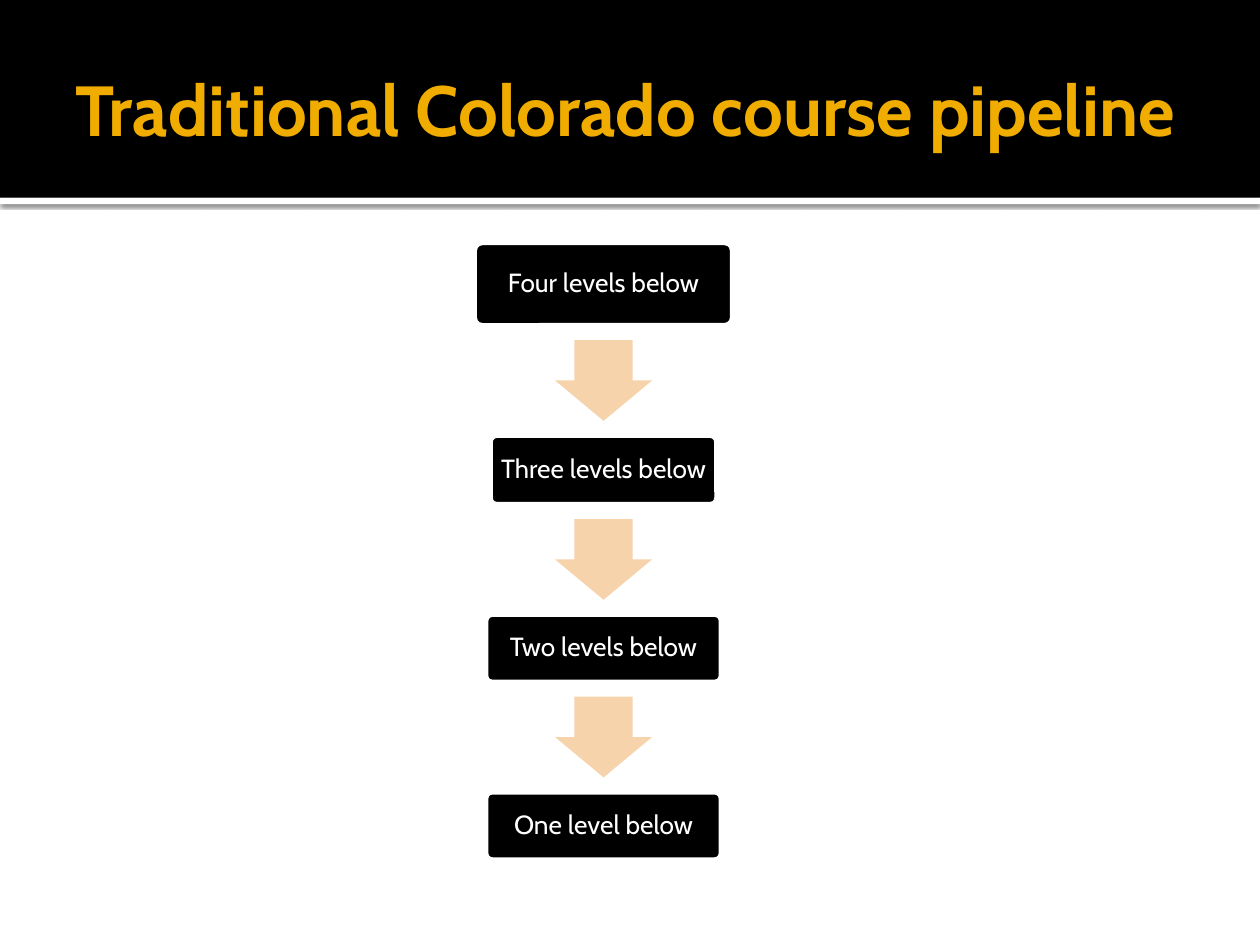
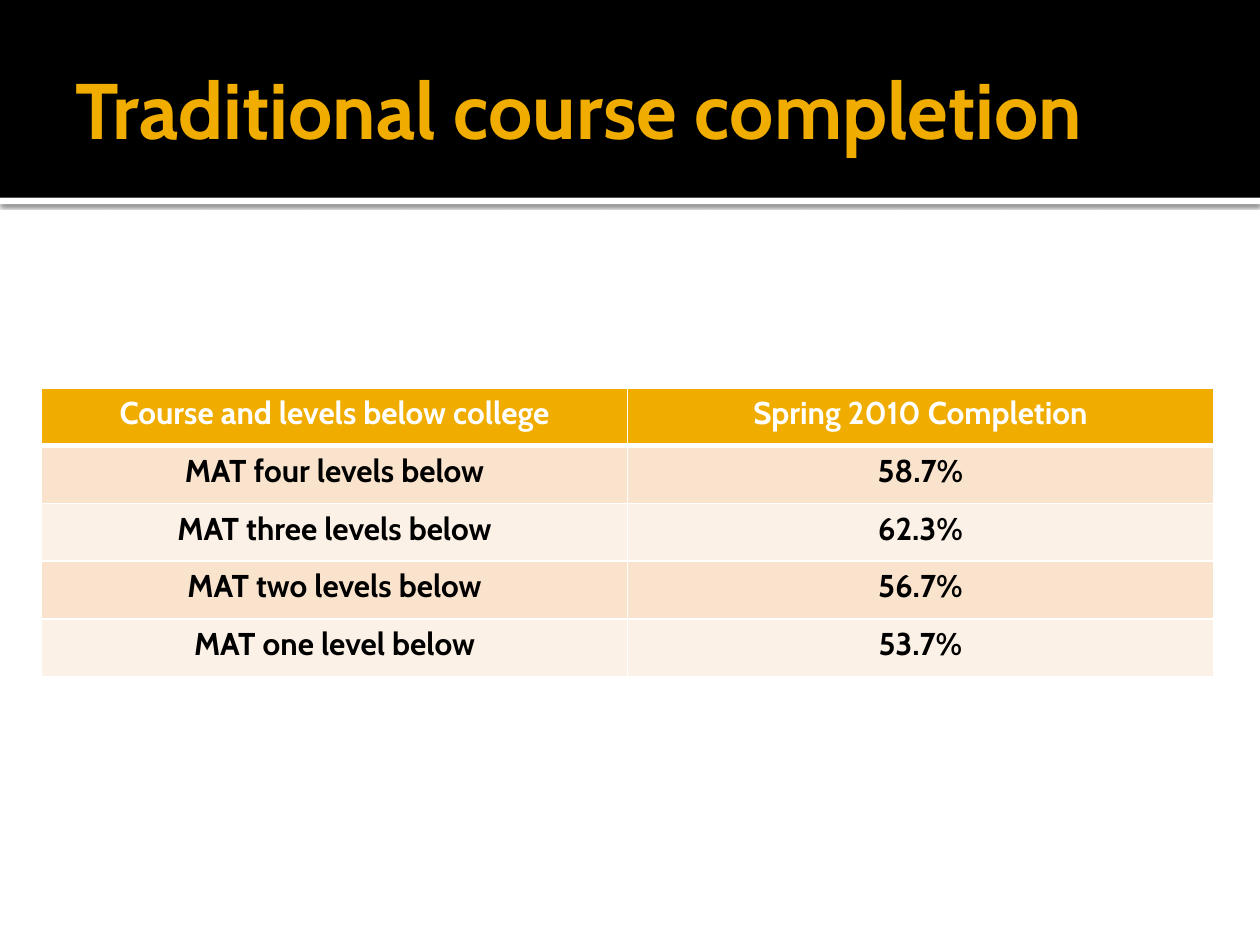
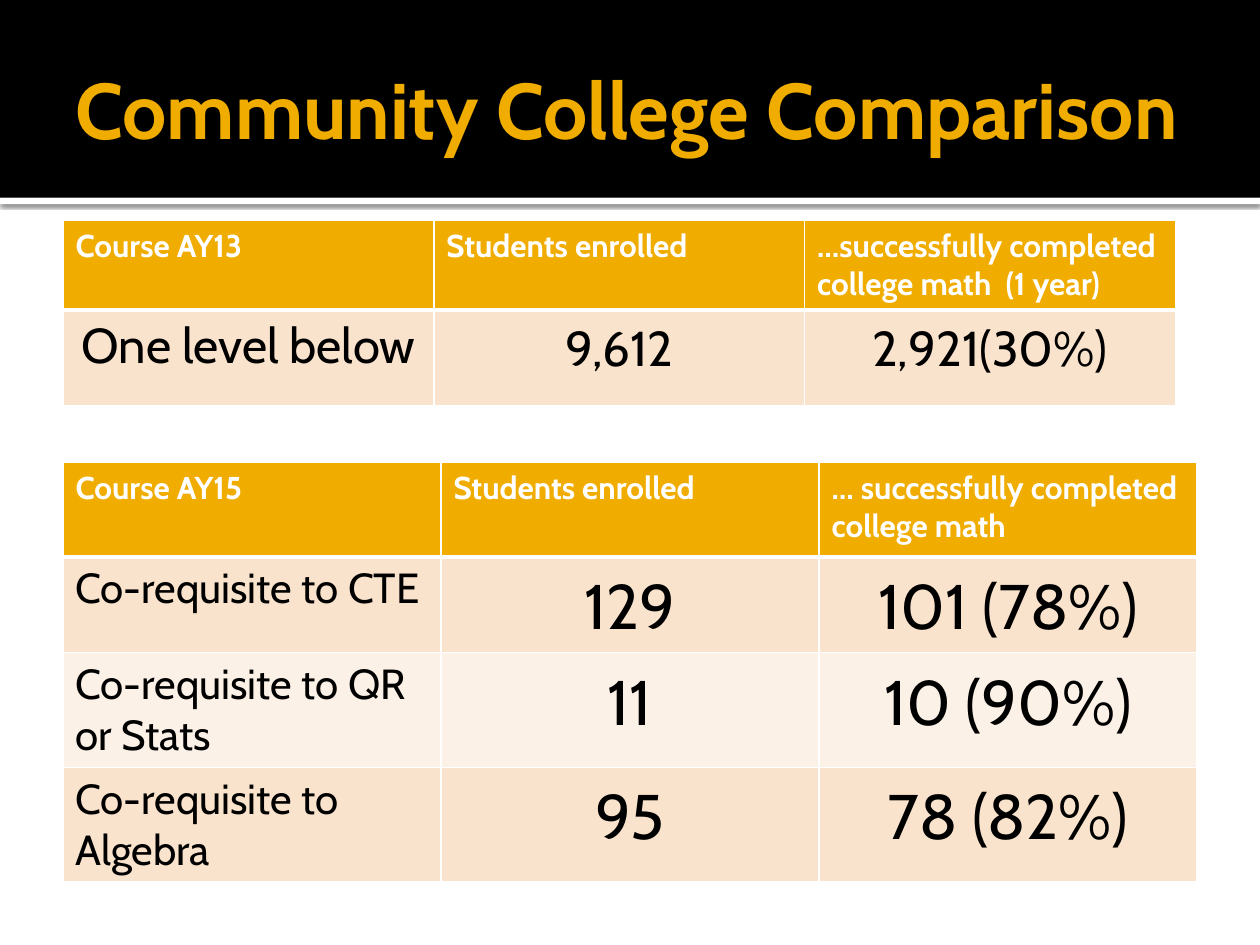
"""Build three slides on traditional and co-requisite college math courses."""
from dataclasses import dataclass, replace
from typing import Optional

from lxml.etree import SubElement
from pptx import Presentation
from pptx.dml.color import RGBColor
from pptx.enum.shapes import MSO_SHAPE as Preset
from pptx.enum.text import MSO_ANCHOR as Anchor, MSO_AUTO_SIZE as AutoSize, PP_ALIGN as Align
from pptx.oxml import parse_xml
from pptx.oxml.ns import nsdecls, qn
from pptx.util import Emu, Inches, Pt

BLACK = RGBColor(0x00, 0x00, 0x00)
WHITE = RGBColor(0xFF, 0xFF, 0xFF)
GOLD = RGBColor(0xF0, 0xAD, 0x00)
PEACH = RGBColor(0xF6, 0xD3, 0xAB)
STRIPES = (RGBColor(0xF9, 0xE3, 0xCC), RGBColor(0xFC, 0xF1, 0xE7))
FONT = "Cabin"

COLUMNS, ROWS = 100, 75
CELL = Inches(0.1)
BAND_ROWS = 15.7


def grid(count: float) -> Emu:
    """Turn a count of grid columns or rows into a length."""
    return Emu(round(count * CELL))


@dataclass(frozen=True)
class TextStyle:
    """Look of a paragraph and the margins around it, in grid units."""
    size: float
    color: RGBColor = BLACK
    bold: bool = False
    align: Align = Align.LEFT
    margin_x: float = 1
    margin_y: float = 0.5
    line_spacing: Optional[float] = None
    space_after: float = 0


@dataclass(frozen=True)
class Step:
    """One box of the course pipeline."""
    label: str
    width: float
    height: float


@dataclass(frozen=True)
class Grid:
    """A table with a header row and one text style per body column."""
    left: float
    top: float
    column_width: float
    row_heights: tuple[float, ...]
    header: TextStyle
    body: tuple[TextStyle, ...]
    texts: tuple[tuple[str, ...], ...]


TITLE = TextStyle(45, GOLD, bold=True)
LONG_TITLE = replace(TITLE, size=40.5)
STEP_TEXT = TextStyle(15, WHITE, align=Align.CENTER, margin_x=0.7, margin_y=0.7, line_spacing=0.9)
HEADER = TextStyle(18, WHITE, bold=True)
CENTERED_HEADER = replace(HEADER, align=Align.CENTER, margin_x=1.1)
COMPLETION = replace(CENTERED_HEADER, color=BLACK)
LEVEL = TextStyle(28, align=Align.CENTER)
COUNT = replace(LEVEL, margin_x=0.7, margin_y=0, line_spacing=1.15, space_after=10)
COREQUISITE = TextStyle(24)
BIG_COUNT = replace(COUNT, size=36, margin_x=0)

STEP_CENTER, STEP_TOP, STEP_GAP = 47.9, 19.2, 8.6
ARROW_LENGTH, ARROW_BREADTH = 6.4, 7.7
STEPS = (
    Step("Four levels below", 20.6, 6.7),
    Step("Three levels below", 18.1, 5.6),
    Step("Two levels below", 18.8, 5.5),
    Step("One level below", 18.8, 5.5),
)

COMPLETION_TABLE = Grid(
    3.3, 30.8, 46.5, (4.58,) * 5, CENTERED_HEADER, (COMPLETION, COMPLETION),
    (
        ("Course and levels below college", "Spring 2010 Completion"),
        ("MAT four levels below", "58.7%"),
        ("MAT three levels below", "62.3%"),
        ("MAT two levels below", "56.7%"),
        ("MAT one level below", "53.7%"),
    ),
)
AY13_TABLE = Grid(
    5, 17.5, 29.43, (7, 7.6), HEADER, (LEVEL, COUNT, COUNT),
    (
        ("Course AY13", "Students enrolled", "…successfully completed college math  (1 year)"),
        ("One level below", "9,612", "2,921(30%)"),
    ),
)
AY15_TABLE = Grid(
    5, 36.7, 30, (7.5, 7.6, 9.1, 9.1), HEADER, (COREQUISITE, BIG_COUNT, BIG_COUNT),
    (
        ("Course AY15", "Students enrolled", "… successfully completed college math"),
        ("Co-requisite to CTE", "129", "101 (78%)"),
        ("Co-requisite to QR or Stats", "11", "10 (90%)"),
        ("Co-requisite to Algebra", "95", "78 (82%)"),
    ),
)


def write(frame, text: str, style: TextStyle) -> None:
    """Put one styled paragraph into a text frame."""
    frame.word_wrap = True
    frame.text = text
    para = frame.paragraphs[0]
    para.alignment = style.align
    para.line_spacing = style.line_spacing
    para.space_after = Pt(style.space_after)
    para.font.name = FONT
    para.font.size = Pt(style.size)
    para.font.bold = style.bold
    para.font.color.rgb = style.color


def set_margins(holder, style: TextStyle) -> None:
    """Give a text frame or a table cell the margins of a style."""
    holder.margin_left = holder.margin_right = grid(style.margin_x)
    holder.margin_top = holder.margin_bottom = grid(style.margin_y)


def add_block(page, preset: Preset, left: float, top: float, width: float, height: float,
              fill: RGBColor):
    """Add a plain filled shape without line or shadow."""
    block = page.shapes.add_shape(preset, grid(left), grid(top), grid(width), grid(height))
    block.shadow.inherit = False
    block.fill.solid()
    block.fill.fore_color.rgb = fill
    block.line.fill.background()
    return block


def add_band(page, layout) -> None:
    """Draw the title band and its shadowed rule, and hand them to the layout."""
    band = add_block(page, Preset.RECTANGLE, 0, 0, COLUMNS, BAND_ROWS, BLACK)
    rule = add_block(page, Preset.RECTANGLE, 0, BAND_ROWS, COLUMNS, 0.5, WHITE)
    effects = rule.element.spPr.find(qn("a:effectLst"))
    effects.append(parse_xml(
        f'<a:outerShdw {nsdecls("a")} blurRad="{Pt(2.5)}" dist="{Pt(0.8)}" dir="5400000" '
        'rotWithShape="0"><a:srgbClr val="000000"><a:alpha val="60000"/></a:srgbClr>'
        '</a:outerShdw>'))
    for block in (band, rule):
        layout.shapes.element.insert(2, block.element)


def add_page(deck, layout, title: str, style: TextStyle = TITLE):
    """Add a slide and format its title."""
    page = deck.slides.add_slide(layout)
    box = page.shapes.title
    box.left, box.top, box.width, box.height = grid(5), grid(1.7), grid(90), grid(13.7)
    frame = box.text_frame
    write(frame, title, style)
    set_margins(frame, style)
    frame.margin_right = grid(0.5)
    frame.vertical_anchor = Anchor.MIDDLE
    frame.auto_size = AutoSize.NONE
    return page


def add_step(page, step: Step, top: float) -> None:
    """Draw one box of the pipeline."""
    box = add_block(page, Preset.ROUNDED_RECTANGLE, STEP_CENTER - step.width / 2, top,
                    step.width, step.height, BLACK)
    box.adjustments[0] = 0.1
    box.line.color.rgb = WHITE
    box.line.width = Pt(3.78)
    write(box.text_frame, step.label, STEP_TEXT)
    set_margins(box.text_frame, STEP_TEXT)
    box.text_frame.vertical_anchor = Anchor.MIDDLE


def add_arrow(page, middle: float) -> None:
    """Draw a downward arrow around a height on the pipeline's axis."""
    arrow = add_block(page, Preset.RIGHT_ARROW, STEP_CENTER - ARROW_LENGTH / 2,
                      middle - ARROW_BREADTH / 2, ARROW_LENGTH, ARROW_BREADTH, PEACH)
    arrow.rotation = 90
    arrow.adjustments[0], arrow.adjustments[1] = 0.6, 0.5


def add_pipeline(page) -> None:
    """Stack the steps with an arrow in each gap."""
    top = STEP_TOP
    for index, step in enumerate(STEPS):
        if index:
            add_arrow(page, top - STEP_GAP / 2)
        add_step(page, step, top)
        top += step.height + STEP_GAP


def add_borders(cell, row: int) -> None:
    """Rule a cell in white, with a heavy line under the header."""
    properties = cell._tc.get_or_add_tcPr()
    widths = {"L": 1, "R": 1, "T": 3 if row == 1 else 1, "B": 3 if row == 0 else 1}
    for side, width in widths.items():
        line = SubElement(properties, qn(f"a:ln{side}"), w=str(Pt(width)))
        SubElement(SubElement(line, qn("a:solidFill")), qn("a:srgbClr"), val=str(WHITE))


def add_grid(page, data: Grid) -> None:
    """Draw a table with a gold header and striped rows."""
    count = len(data.body)
    table = page.shapes.add_table(
        len(data.texts), count, grid(data.left), grid(data.top),
        grid(data.column_width * count), grid(sum(data.row_heights))).table
    for column in table.columns:
        column.width = grid(data.column_width)
    for row, (height, texts) in enumerate(zip(data.row_heights, data.texts)):
        table.rows[row].height = grid(height)
        for column, text in enumerate(texts):
            style = data.body[column] if row else data.header
            cell = table.cell(row, column)
            add_borders(cell, row)
            cell.fill.solid()
            cell.fill.fore_color.rgb = STRIPES[(row - 1) % 2] if row else GOLD
            write(cell.text_frame, text, style)
            set_margins(cell, style)


def main() -> None:
    """Build and save the deck."""
    deck = Presentation()
    deck.slide_width, deck.slide_height = grid(COLUMNS), grid(ROWS)
    layout = deck.slide_layouts.get_by_name("Title Only")

    pipeline = add_page(deck, layout, "Traditional Colorado course pipeline", LONG_TITLE)
    add_band(pipeline, layout)
    add_pipeline(pipeline)

    completion = add_page(deck, layout, "Traditional course completion")
    add_grid(completion, COMPLETION_TABLE)

    comparison = add_page(deck, layout, "Community College Comparison")
    for data in (AY13_TABLE, AY15_TABLE):
        add_grid(comparison, data)

    deck.save("out.pptx")


if __name__ == "__main__":
    main()
